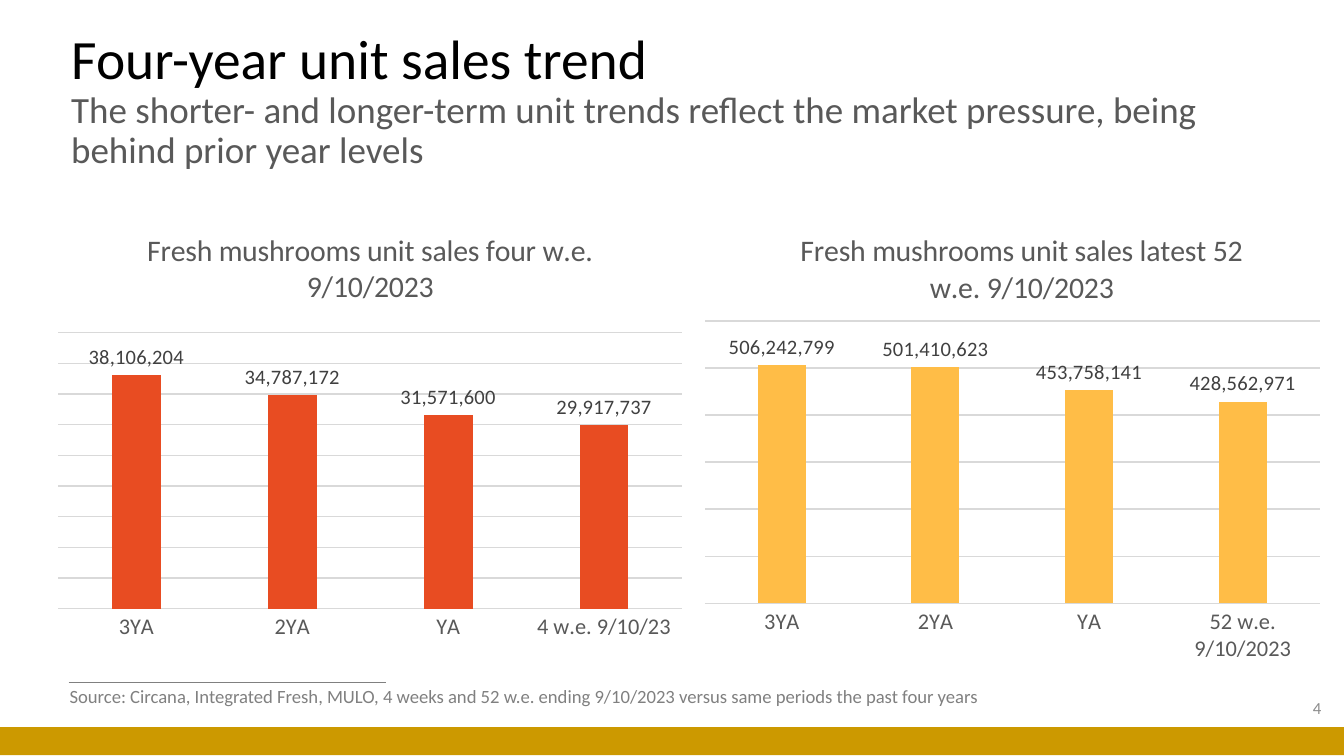
from lxml.etree import SubElement
from pptx import Presentation
from pptx.chart.data import CategoryChartData
from pptx.dml.color import RGBColor
from pptx.enum.chart import XL_CHART_TYPE, XL_LABEL_POSITION, XL_TICK_LABEL_POSITION, XL_TICK_MARK
from pptx.enum.shapes import MSO_CONNECTOR, MSO_SHAPE
from pptx.enum.text import MSO_ANCHOR, MSO_AUTO_SIZE, PP_ALIGN
from pptx.oxml import parse_xml
from pptx.oxml.ns import nsdecls, qn
from pptx.util import Inches, Pt

FONT = "Calibri"
BLACK = RGBColor(0x00, 0x00, 0x00)
DARK = RGBColor(0x40, 0x40, 0x40)
TEXT = RGBColor(0x59, 0x59, 0x59)
SOURCE = RGBColor(0x80, 0x80, 0x80)
NUMBER = RGBColor(0x8C, 0x8C, 0x8C)
GRID = RGBColor(0xD9, 0xD9, 0xD9)
GOLD = RGBColor(0xCC, 0x99, 0x00)
RED = RGBColor(0xE8, 0x4C, 0x22)
YELLOW = RGBColor(0xFF, 0xBD, 0x47)


def set_font(font, size, color):
    for name, value in {"name": FONT, "size": Pt(size), "bold": False}.items():
        setattr(font, name, value)
    font.color.rgb = color


def set_line(line, color, width):
    line.color.rgb = color
    line.width = Pt(width)


def add_heading(s, box, title, subtitle):
    sp = s.shapes.title
    sp.left, sp.top, sp.width, sp.height = map(Inches, box)
    tf = sp.text_frame
    tf.auto_size = MSO_AUTO_SIZE.NONE
    tf.vertical_anchor = MSO_ANCHOR.MIDDLE
    p = tf.paragraphs[0]
    p.alignment = PP_ALIGN.LEFT
    p.line_spacing = 0.9
    r = p.add_run()
    r.text = title
    set_font(r.font, 29.7, BLACK)
    p.add_line_break()
    r = p.add_run()
    r.text = subtitle
    set_font(r.font, 19.8, TEXT)


def add_text(s, box, text, size, color, align=PP_ALIGN.LEFT, anchor=MSO_ANCHOR.TOP, wrap=True):
    tf = s.shapes.add_textbox(*map(Inches, box)).text_frame
    tf.word_wrap = wrap
    tf.vertical_anchor = anchor
    p = tf.paragraphs[0]
    p.alignment = align
    r = p.add_run()
    r.text = text
    set_font(r.font, size, color)


def add_footer(s, box, source, number):
    """Place the gold band at the bottom of the box, with rule, source and number above it."""
    x, y, w, h = box
    rule = s.shapes.add_connector(MSO_CONNECTOR.STRAIGHT, Inches(x + 0.51), Inches(y + 0.03),
                                  Inches(x + 2.87), Inches(y + 0.03))
    set_line(rule.line, SOURCE, 0.5)
    SubElement(rule._element.spPr, qn("a:effectLst"))
    band = s.shapes.add_shape(MSO_SHAPE.RECTANGLE, Inches(x), Inches(y + h - 0.21),
                              Inches(w), Inches(0.21))
    band.shadow.inherit = False
    band.fill.solid()
    band.fill.fore_color.rgb = GOLD
    band.line.fill.background()
    add_text(s, (x + w - 2.32, y + 0.07, 2.25, 0.3), number, 9, NUMBER,
             PP_ALIGN.RIGHT, MSO_ANCHOR.MIDDLE)
    add_text(s, (x + 0.42, y, 7.1, 0.27), source, 10, SOURCE, wrap=False)


def set_plot_layout(chart, plot):
    """Fix the inner plot area; plot is x, y, w and h as fractions of the chart."""
    area = chart._chartSpace.chart.plotArea
    for old in area.findall(qn("c:layout")):
        area.remove(old)
    modes = "".join(f'<c:{k}Mode val="edge"/>' for k in "xy")
    sizes = "".join(f'<c:{k} val="{v}"/>' for k, v in zip("xywh", plot))
    area.insert(0, parse_xml(
        f'<c:layout {nsdecls("c")}><c:manualLayout><c:layoutTarget val="inner"/>'
        f'{modes}{sizes}</c:manualLayout></c:layout>'))


def add_sales_chart(s, box, title, plot, cats, vals, top, step, color):
    data = CategoryChartData(number_format="#,##0")
    data.categories = cats
    data.add_series("Series 1", vals)
    chart = s.shapes.add_chart(XL_CHART_TYPE.COLUMN_CLUSTERED, *map(Inches, box), data).chart
    set_font(chart.font, 10, BLACK)
    chart.has_legend = False

    chart.has_title = True
    tf = chart.chart_title.text_frame
    tf.text = title
    p = tf.paragraphs[0]
    p.alignment = PP_ALIGN.CENTER
    set_font(p.runs[0].font, 16, TEXT)
    set_plot_layout(chart, plot)

    axis = chart.category_axis
    axis.major_tick_mark = axis.minor_tick_mark = XL_TICK_MARK.NONE
    axis.tick_label_position = XL_TICK_LABEL_POSITION.NEXT_TO_AXIS
    set_font(axis.tick_labels.font, 12, TEXT)
    set_line(axis.format.line, GRID, 0.75)
    axis = chart.value_axis
    for name, value in {"minimum_scale": 0, "maximum_scale": top, "major_unit": step,
                        "major_tick_mark": XL_TICK_MARK.NONE,
                        "has_major_gridlines": True, "visible": False}.items():
        setattr(axis, name, value)
    set_line(axis.major_gridlines.format.line, GRID, 0.75)

    bars = chart.plots[0]
    for name, value in {"gap_width": 219, "overlap": -27, "vary_by_categories": False}.items():
        setattr(bars, name, value)
    series = bars.series[0]
    series.format.fill.solid()
    series.format.fill.fore_color.rgb = color
    labels = series.data_labels
    for name, value in {"show_value": True, "position": XL_LABEL_POSITION.OUTSIDE_END,
                        "number_format": "#,##0", "number_format_is_linked": False}.items():
        setattr(labels, name, value)
    set_font(labels.font, 11, DARK)


def main():
    prs = Presentation()
    prs.slide_width = Inches(10)
    prs.slide_height = prs.slide_width * 9 // 16
    s = prs.slides.add_slide(prs.slide_layouts[5])
    add_heading(s, (0.43, 0.36, 9.06, 0.79), "Four-year unit sales trend",
                "The shorter- and longer-term unit trends reflect the market pressure, "
                "being behind prior year levels")
    add_footer(s, (0, 5.05, 10, 0.57),
               "Source: Circana, Integrated Fresh, MULO, 4 weeks and 52 w.e. ending 9/10/2023 "
               "versus same periods the past four years", "4")
    years = ["3YA", "2YA", "YA"]
    add_sales_chart(s, (0.43, 1.55, 4.65, 3.31),
                    "Fresh mushrooms unit sales four w.e. 9/10/2023",
                    (0, 0.28, 1, 0.62), years + ["4 w.e. 9/10/23"],
                    (38106204, 34787172, 31571600, 29917737), 45_000_000, 5_000_000, RED)
    add_sales_chart(s, (5.24, 1.55, 4.72, 3.5),
                    "Fresh mushrooms unit sales latest 52 w.e. 9/10/2023",
                    (0, 0.24, 0.97, 0.6), years + ["52 w.e. 9/10/2023"],
                    (506242799, 501410623, 453758141, 428562971), 600_000_000, 100_000_000, YELLOW)
    prs.save("out.pptx")


if __name__ == "__main__":
    main()
